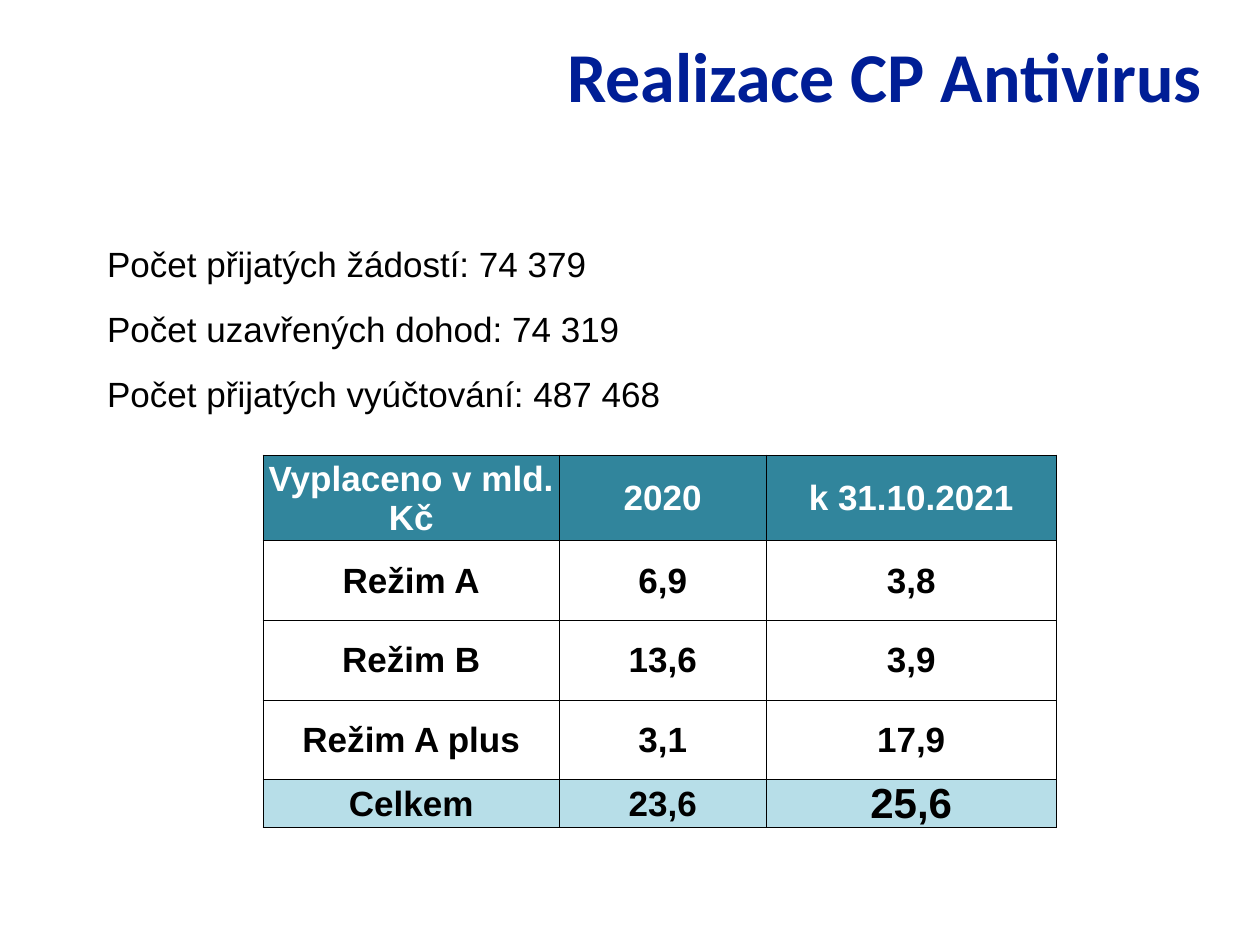
from dataclasses import dataclass
from lxml import etree
from pptx import Presentation
from pptx.dml.color import RGBColor as Rgb
from pptx.enum import text as t
from pptx.oxml import ns
from pptx.util import Pt


@dataclass(frozen=True)
class Theme:
    navy: str = "001E96"
    black: str = "000000"
    white: str = "FFFFFF"
    teal: str = "31859C"
    pale: str = "B7DEE8"
    head: str = "Calibri"
    face: str = "Arial"
    title: int = 40
    body: int = 20
    total: int = 24


LOOK = Theme()
FACTS = [
    "Počet přijatých žádostí: 74 379",
    "Počet uzavřených dohod: 74 319",
    "Počet přijatých vyúčtování: 487 468",
]
ROWS = [
    ["Vyplaceno v mld. Kč", "2020", "k 31.10.2021"],
    ["Režim A", "6,9", "3,8"],
    ["Režim B", "13,6", "3,9"],
    ["Režim A plus", "3,1", "17,9"],
    ["Celkem", "23,6", "25,6"],
]
WIDTHS = [169.5, 118, 166]
HEIGHTS = [49, 45.5, 45.5, 45.5, 24.5]


def write(para, words, size=LOOK.body, face=LOOK.face, color=LOOK.black,
          bold=False, align=t.PP_ALIGN.LEFT, before=0):
    para.alignment = align
    para.space_before = Pt(before)
    run = para.add_run()
    run.text = words
    font = run.font
    font.size, font.name, font.bold = Pt(size), face, bold
    font.color.rgb = Rgb.from_string(color)


def place(shape, left, top, width, height):
    shape.left, shape.top = Pt(left), Pt(top)
    shape.width, shape.height = Pt(width), Pt(height)
    frame = shape.text_frame
    frame.word_wrap = True
    frame.auto_size = t.MSO_AUTO_SIZE.NONE
    frame.vertical_anchor = t.MSO_ANCHOR.TOP
    return frame


def add_title(slide):
    frame = place(slide.shapes.title, 173, 15, 521, 108)
    write(frame.paragraphs[0], "Realizace CP Antivirus", size=LOOK.title,
          face=LOOK.head, color=LOOK.navy, bold=True, align=t.PP_ALIGN.RIGHT)


def add_facts(slide):
    frame = place(slide.placeholders[1], 54, 135, 641, 147)
    for i, fact in enumerate(FACTS):
        para = frame.paragraphs[0] if i == 0 else frame.add_paragraph()
        props = para._p.get_or_add_pPr()
        props.set("marL", str(Pt(28)))
        props.set("indent", str(-Pt(28)))
        etree.SubElement(props, ns.qn("a:buNone"))
        write(para, fact, before=13 if i else 0)


def rule(cell):
    props = cell._tc.get_or_add_tcPr()
    for side in "LRTB":
        line = etree.SubElement(props, ns.qn("a:ln" + side), w=str(Pt(0.5)))
        fill = etree.SubElement(line, ns.qn("a:solidFill"))
        etree.SubElement(fill, ns.qn("a:srgbClr"), val=LOOK.black)


def fill_cell(cell, words, back=None, **kind):
    cell.margin_left = cell.margin_right = cell.margin_top = Pt(0.75)
    cell.margin_bottom = 0
    cell.vertical_anchor = t.MSO_ANCHOR.MIDDLE
    rule(cell)
    if back:
        cell.fill.solid()
        cell.fill.fore_color.rgb = Rgb.from_string(back)
    else:
        cell.fill.background()
    write(cell.text_frame.paragraphs[0], words, bold=True,
          align=t.PP_ALIGN.CENTER, **kind)


def add_sums(slide):
    table = slide.shapes.add_table(
        len(ROWS), len(WIDTHS), Pt(150.25), Pt(260),
        Pt(sum(WIDTHS)), Pt(sum(HEIGHTS))).table
    table.horz_banding = False
    for col, width in zip(table.columns, WIDTHS):
        col.width = Pt(width)
    last = len(ROWS) - 1
    kinds = {0: dict(back=LOOK.teal, color=LOOK.white),
             last: dict(back=LOOK.pale)}
    for r, row in enumerate(ROWS):
        table.rows[r].height = Pt(HEIGHTS[r])
        for c, words in enumerate(row):
            grand = r == last and c == len(row) - 1
            fill_cell(table.cell(r, c), words,
                      size=LOOK.total if grand else LOOK.body,
                      **kinds.get(r, {}))


def main():
    deck = Presentation()
    deck.slide_width, deck.slide_height = Pt(720), Pt(540)
    slide = deck.slides.add_slide(deck.slide_layouts[1])
    add_title(slide)
    add_facts(slide)
    add_sums(slide)
    deck.save("out.pptx")


if __name__ == "__main__":
    main()
